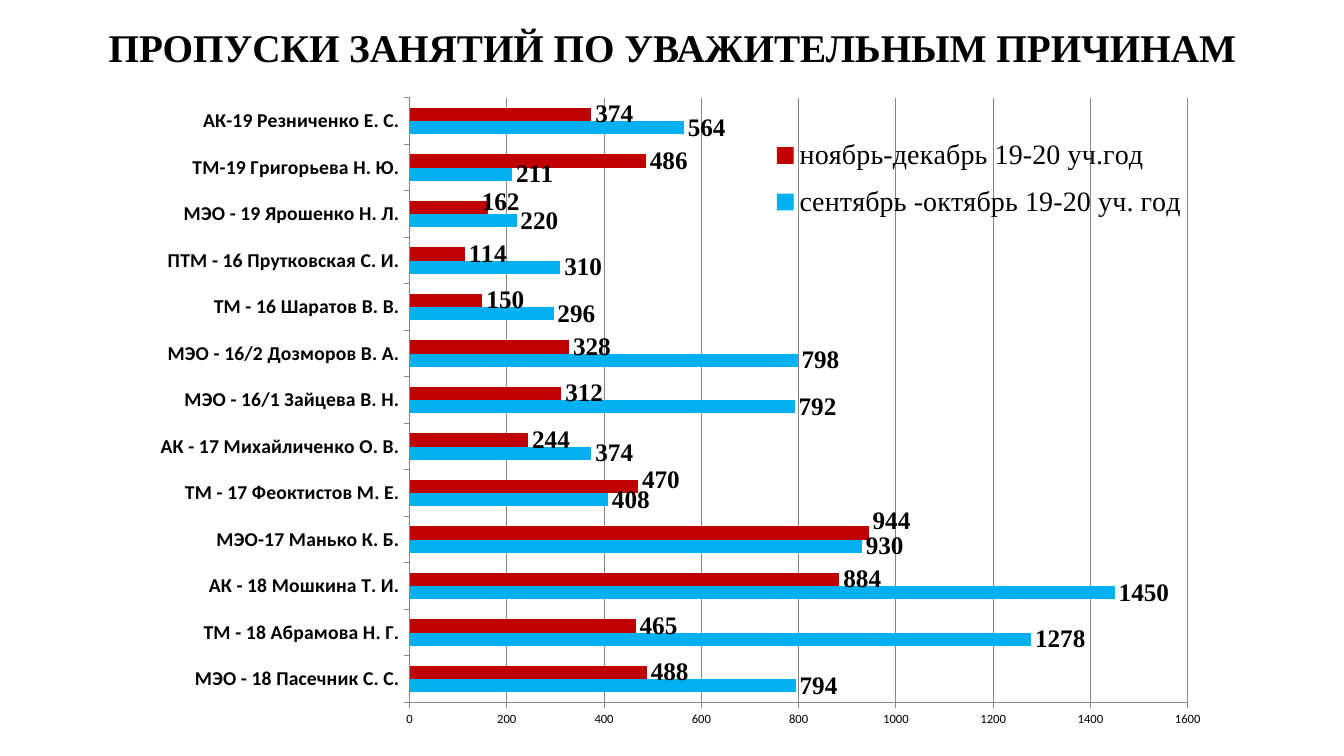
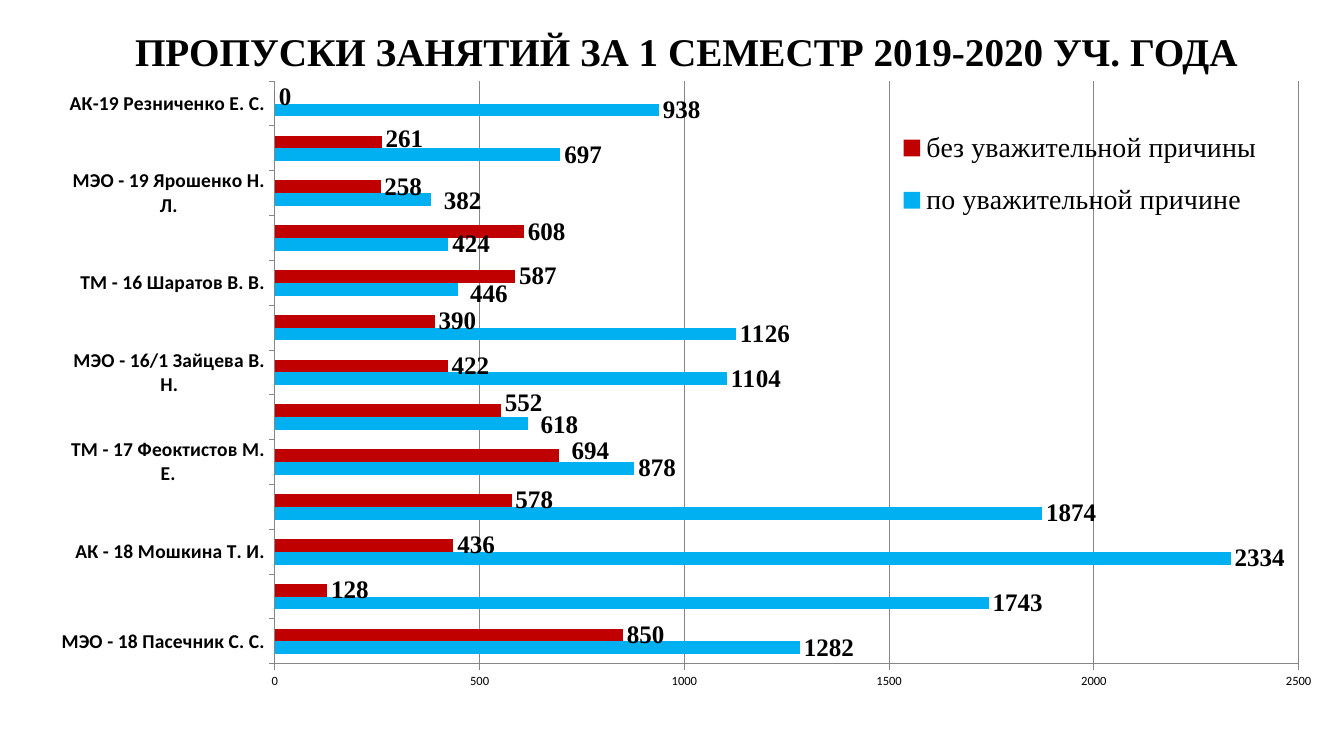
from lxml import etree
from pptx import Presentation
from pptx.chart.data import CategoryChartData
from pptx.dml.color import RGBColor
from pptx.enum.chart import XL_CHART_TYPE, XL_LABEL_POSITION, XL_LEGEND_POSITION, XL_TICK_MARK
from pptx.enum.text import MSO_ANCHOR, MSO_AUTO_SIZE, PP_ALIGN
from pptx.oxml.ns import qn
from pptx.util import Cm, Pt

BAR_CLUSTERED = XL_CHART_TYPE.BAR_CLUSTERED
OUTSIDE_END = XL_LABEL_POSITION.OUTSIDE_END
LEGEND_RIGHT = XL_LEGEND_POSITION.RIGHT
TICK_OUTSIDE = XL_TICK_MARK.OUTSIDE
MIDDLE = MSO_ANCHOR.MIDDLE
NO_AUTO_SIZE = MSO_AUTO_SIZE.NONE
CENTER, LEFT = PP_ALIGN.CENTER, PP_ALIGN.LEFT

SERIF, SANS = "Times New Roman", "Calibri"
BLACK, GRAY, BLUE, RED = "000000", "868686", "00B0F0", "C00000"
TITLE_ONLY = 5

GROUPS = [
    "МЭО - 18 Пасечник С. С.",
    "ТМ - 18 Абрамова Н. Г.",
    "АК - 18 Мошкина Т. И.",
    "МЭО-17 Манько К. Б.",
    "ТМ - 17 Феоктистов М. Е.",
    "АК - 17 Михайличенко О. В.",
    "МЭО - 16/1 Зайцева В. Н.",
    "МЭО - 16/2 Дозморов В. А.",
    "ТМ - 16 Шаратов В. В.",
    "ПТМ - 16 Прутковская С. И.",
    "МЭО - 19 Ярошенко Н. Л.",
    "ТМ-19 Григорьева Н. Ю.",
    "АК-19 Резниченко Е. С.",
]

SLIDES = [
    {
        "title": "ПРОПУСКИ ЗАНЯТИЙ ПО УВАЖИТЕЛЬНЫМ ПРИЧИНАМ",
        "title_box": (2.34, 0.46, 29.21, 1.45),
        "alignment": CENTER,
        "chart_box": (1.19, 2.34, 29.36, 16.05),
        "plot_area": {"x": 0.311, "y": 0.008, "w": 0.668, "h": 0.949},
        "legend_area": {"x": 0.62, "y": 0.05, "w": 0.36, "h": 0.17},
        "axis": (1600, 200),
        "series": [
            ("сентябрь -октябрь 19-20 уч. год",
             [794, 1278, 1450, 930, 408, 374, 792, 798, 296, 310, 220, 211, 564], {}),
            ("ноябрь-декабрь 19-20 уч.год",
             [488, 465, 884, 944, 470, 244, 312, 328, 150, 114, 162, 486, 374],
             {3: (0, -0.018), 4: (0, -0.01), 10: (-0.009, -0.008)}),
        ],
    },
    {
        "title": "ПРОПУСКИ ЗАНЯТИЙ ЗА 1 СЕМЕСТР 2019-2020 УЧ. ГОДА",
        "title_box": (3.15, 0.56, 28.85, 1.45),
        "alignment": LEFT,
        "chart_box": (1.55, 2.03, 31.5, 15.72),
        "plot_area": {"x": 0.167, "y": 0.001, "w": 0.824, "h": 0.934},
        "legend_area": {"x": 0.67, "y": 0.05, "w": 0.29, "h": 0.2},
        "axis": (2500, 500),
        "series": [
            ("по уважительной причине",
             [1282, 1743, 2334, 1874, 878, 618, 1104, 1126, 446, 424, 382, 697, 938],
             {5: (0.007, 0.002), 8: (0.007, 0.008), 10: (0.007, 0.002)}),
            ("без уважительной причины",
             [850, 128, 436, 578, 694, 552, 422, 390, 587, 608, 258, 261, 0],
             {4: (0.007, -0.008), 5: (0, -0.012), 11: (0, -0.005)}),
        ],
    },
]


def rgb(value):
    return RGBColor.from_string(value)


def style_font(font, name, size, bold=False):
    font.name = name
    font.size = Pt(size)
    font.bold = bold
    font.color.rgb = rgb(BLACK)


def style_line(line):
    line.color.rgb = rgb(GRAY)
    line.width = Pt(0.75)


def set_layout(parent, index, modes, values):
    for previous in parent.findall(qn("c:layout")):
        parent.remove(previous)
    layout = etree.Element(qn("c:layout"))
    manual = etree.SubElement(layout, qn("c:manualLayout"))
    for tag, value in [*modes.items(), *values.items()]:
        etree.SubElement(manual, qn(f"c:{tag}")).set("val", str(value))
    parent.insert(index, layout)


def add_title(slide, text, box, alignment):
    title = slide.shapes.title
    title.left, title.top, title.width, title.height = map(Cm, box)
    frame = title.text_frame
    frame.word_wrap = False
    frame.auto_size = NO_AUTO_SIZE
    frame.vertical_anchor = MIDDLE
    paragraph = frame.paragraphs[0]
    paragraph.alignment = alignment
    run = paragraph.add_run()
    run.text = text
    style_font(run.font, SERIF, 28, True)


def style_labels(series, offsets):
    labels = series.data_labels
    labels.show_value = True
    labels.position = OUTSIDE_END
    style_font(labels.font, SERIF, 18, True)
    for index, (x, y) in offsets.items():
        label = series.points[index].data_label
        style_font(label.font, SERIF, 18, True)
        label.position = OUTSIDE_END
        element = series._element.xpath(f'c:dLbls/c:dLbl[c:idx/@val="{index}"]')[0]
        set_layout(element, 1, {}, {"x": x, "y": y})


def style_axes(chart, maximum, unit):
    category_axis, value_axis = chart.category_axis, chart.value_axis
    style_font(category_axis.tick_labels.font, SANS, 14, True)
    style_font(value_axis.tick_labels.font, SANS, 9)
    for axis in (category_axis, value_axis):
        axis.major_tick_mark = TICK_OUTSIDE
        style_line(axis.format.line)
    value_axis.minimum_scale = 0
    value_axis.maximum_scale = maximum
    value_axis.major_unit = unit
    value_axis.has_major_gridlines = True
    style_line(value_axis.major_gridlines.format.line)


def add_legend(chart, area, modes):
    chart.has_legend = True
    legend = chart.legend
    legend.position = LEGEND_RIGHT
    legend.include_in_layout = False
    style_font(legend.font, SERIF, 20)
    set_layout(legend._element, 1, modes, area)


def add_bar_chart(slide, content):
    data = CategoryChartData()
    data.categories = GROUPS
    for name, values, _ in content["series"]:
        data.add_series(name, values)
    chart = slide.shapes.add_chart(
        BAR_CLUSTERED, *map(Cm, content["chart_box"]), data).chart
    chart.has_title = False
    style_font(chart.font, SANS, 18)
    style_axes(chart, *content["axis"])
    plot = chart.plots[0]
    plot.gap_width = 150
    plot.vary_by_categories = False
    for series, color, (_, _, offsets) in zip(plot.series, (BLUE, RED), content["series"]):
        series.format.fill.solid()
        series.format.fill.fore_color.rgb = rgb(color)
        style_labels(series, offsets)
    edges = {"xMode": "edge", "yMode": "edge"}
    add_legend(chart, content["legend_area"], edges)
    plot_area = chart._chartSpace.xpath("c:chart/c:plotArea")[0]
    set_layout(plot_area, 0, {"layoutTarget": "inner", **edges}, content["plot_area"])


def main():
    presentation = Presentation()
    presentation.slide_width = Cm(33.87)
    presentation.slide_height = Cm(19.05)
    for content in SLIDES:
        slide = presentation.slides.add_slide(presentation.slide_layouts[TITLE_ONLY])
        add_title(slide, content["title"], content["title_box"], content["alignment"])
        add_bar_chart(slide, content)
    presentation.save("out.pptx")


if __name__ == "__main__":
    main()
